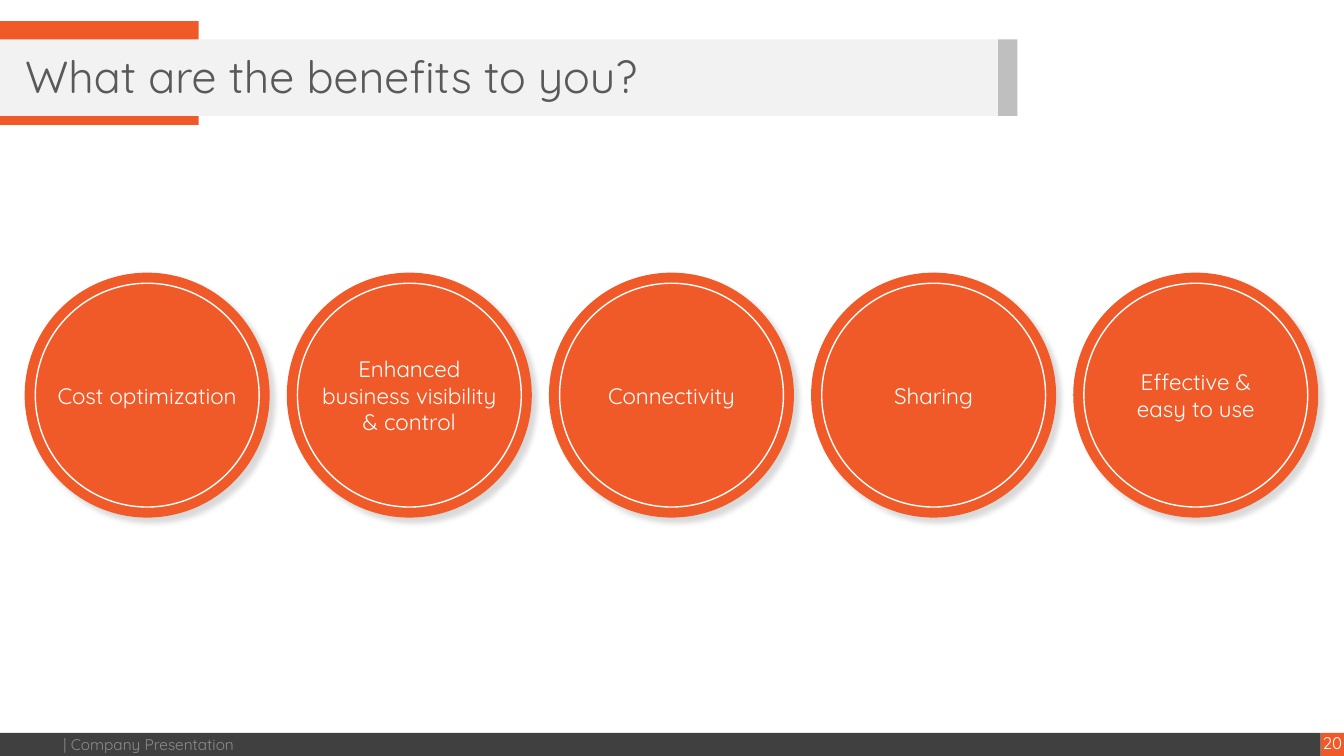
from lxml import etree
from pptx import Presentation
from pptx.dml.color import RGBColor
from pptx.enum.shapes import MSO_SHAPE
from pptx.enum.text import MSO_ANCHOR, MSO_AUTO_SIZE, PP_ALIGN
from pptx.oxml.ns import qn
from pptx.util import Inches, Pt

RECTANGLE, OVAL = MSO_SHAPE.RECTANGLE, MSO_SHAPE.OVAL
LEFT, CENTER = PP_ALIGN.LEFT, PP_ALIGN.CENTER
TOP, MIDDLE = MSO_ANCHOR.TOP, MSO_ANCHOR.MIDDLE
NO_AUTOSIZE = MSO_AUTO_SIZE.NONE

ORANGE = RGBColor(0xF0, 0x5A, 0x28)
CHARCOAL = RGBColor(0x40, 0x40, 0x40)
PALE_GRAY = RGBColor(0xF2, 0xF2, 0xF2)
MID_GRAY = RGBColor(0xBF, 0xBF, 0xBF)
TITLE_GRAY = RGBColor(0x58, 0x59, 0x5B)
FOOTER_GRAY = RGBColor(0x8C, 0x8C, 0x8C)
WHITE = RGBColor(0xFF, 0xFF, 0xFF)
FONT = "Quicksand"

TITLE = "What are the benefits to you?"
FOOTER = "| Company Presentation"
PAGE_NUMBER = "20"
BENEFITS = [
    ("Cost optimization", 1.9, 1),
    ("Enhanced business visibility & control", 1.9, 3),
    ("Connectivity", 1.9, 1),
    ("Sharing", 1.3, 1),
    ("Effective & easy to use", 1.59, 2),
]
PAGE_BOX = (13.1, 7.27, 0.23, 0.23)
BARS = [
    (PAGE_BOX, ORANGE),
    ((0, 7.27, 13.1, 0.23), CHARCOAL),
    ((0, 0.21, 1.97, 1.03), ORANGE),
    ((0, 0.39, 9.9, 0.76), PALE_GRAY),
    ((9.9, 0.39, 0.19, 0.76), MID_GRAY),
]
FIRST_CENTER, CENTER_Y, PITCH = 1.46, 3.92, 2.6
DISC_SIZE, RING_SIZE, LINE_HEIGHT = 2.43, 2.22, 0.27


def centered(center_x, width, height):
    """Return the box of a given size centred on the row of circles."""
    return center_x - width / 2, CENTER_Y - height / 2, width, height


def add_shape(slide, kind, box, fill=None):
    """Add a plain shape with an optional solid fill and no line."""
    shape = slide.shapes.add_shape(kind, *map(Inches, box))
    shape.shadow.inherit = False
    shape.line.fill.background()
    if fill is None:
        shape.fill.background()
    else:
        shape.fill.solid()
        shape.fill.fore_color.rgb = fill
    return shape


def add_soft_shadow(shape):
    """Give a shape a faint shadow to the lower right."""
    effects = shape._element.spPr.find(qn("a:effectLst"))
    shadow = etree.SubElement(
        effects, qn("a:outerShdw"), blurRad=str(Pt(4)), dist=str(Pt(5)),
        dir="2700000", algn="tl", rotWithShape="0")
    color = etree.SubElement(shadow, qn("a:srgbClr"), val="000000")
    etree.SubElement(color, qn("a:alpha"), val="15000")


def write_text(shape, text, size, color, alignment=LEFT, anchor=TOP):
    """Fill a shape with one paragraph of text without margins."""
    frame = shape.text_frame
    frame.text = text
    frame.word_wrap = True
    frame.auto_size = NO_AUTOSIZE
    frame.vertical_anchor = anchor
    frame.margin_left = frame.margin_right = 0
    frame.margin_top = frame.margin_bottom = 0
    paragraph = frame.paragraphs[0]
    paragraph.alignment = alignment
    paragraph.font.name = FONT
    paragraph.font.size = Pt(size)
    paragraph.font.color.rgb = color
    return paragraph


def add_text(slide, box, *style):
    """Add a text box."""
    write_text(slide.shapes.add_textbox(*map(Inches, box)), *style)


def main():
    """Build the benefits slide."""
    presentation = Presentation()
    presentation.slide_width = Inches(13.33)
    presentation.slide_height = Inches(7.5)
    slide = presentation.slides.add_slide(presentation.slide_layouts[5])

    for box, color in BARS:
        add_shape(slide, RECTANGLE, box, color)

    title = slide.shapes.title
    title.left, title.top, title.width, title.height = map(
        Inches, (0.25, 0.54, 6.79, 0.48))
    write_text(title, TITLE, 32, TITLE_GRAY, LEFT, MIDDLE).line_spacing = 0.9
    slide.shapes._spTree.append(title._element)

    add_text(slide, (0.63, 7.29, 4.5, 0.23), FOOTER, 11, FOOTER_GRAY)
    add_text(slide, PAGE_BOX, PAGE_NUMBER, 12, WHITE, CENTER)

    for index, (label, width, lines) in enumerate(BENEFITS):
        center_x = FIRST_CENTER + index * PITCH
        disc = add_shape(
            slide, OVAL, centered(center_x, DISC_SIZE, DISC_SIZE), ORANGE)
        add_soft_shadow(disc)
        add_text(slide, centered(center_x, width, lines * LINE_HEIGHT),
                 label, 16, WHITE, CENTER, MIDDLE)
        ring = add_shape(
            slide, OVAL, centered(center_x, RING_SIZE, RING_SIZE))
        ring.line.color.rgb = WHITE
        ring.line.width = Pt(1)

    presentation.save("out.pptx")


if __name__ == "__main__":
    main()
